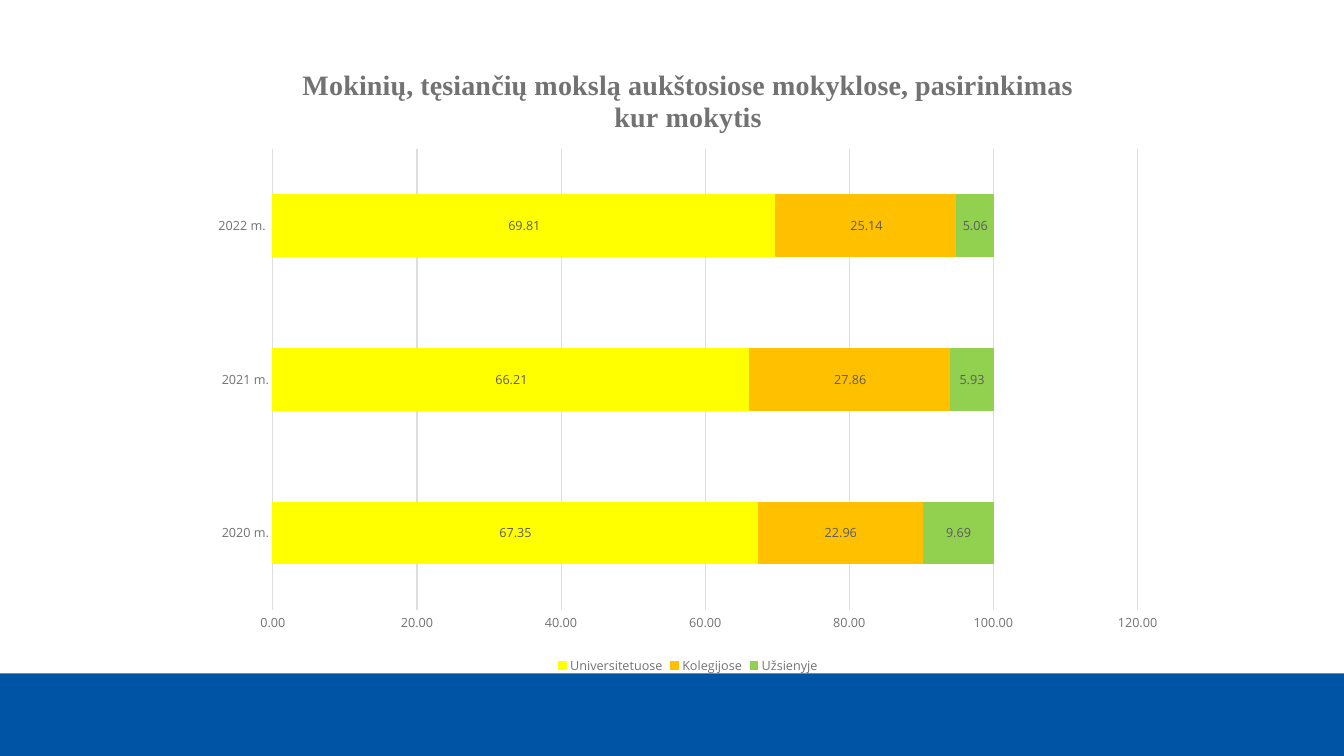
from lxml import etree
from pptx import Presentation
from pptx.chart.data import CategoryChartData
from pptx.dml.color import RGBColor
from pptx.enum.chart import (XL_CHART_TYPE, XL_LABEL_POSITION, XL_LEGEND_POSITION,
                             XL_TICK_MARK)
from pptx.enum.shapes import MSO_SHAPE
from pptx.oxml.ns import qn
from pptx.util import Inches, Pt

BAR_STACKED = XL_CHART_TYPE.BAR_STACKED
LABEL_CENTER = XL_LABEL_POSITION.CENTER
LEGEND_BOTTOM = XL_LEGEND_POSITION.BOTTOM
NO_TICK = XL_TICK_MARK.NONE
RECTANGLE = MSO_SHAPE.RECTANGLE

BLUE = RGBColor(0x00, 0x54, 0xA5)
INK = RGBColor(0x26, 0x26, 0x26)
GREY = RGBColor(0x72, 0x72, 0x72)
LABEL_GREY = RGBColor(0x5C, 0x5C, 0x5C)
GRID_GREY = RGBColor(0xDE, 0xDE, 0xDE)
YELLOW = RGBColor(0xFF, 0xFF, 0x00)
ORANGE = RGBColor(0xFF, 0xC0, 0x00)
GREEN = RGBColor(0x92, 0xD0, 0x50)

BODY_FONT = "Open Sans"
TITLE_FONT = "Times New Roman"
VALUE_FORMAT = "0.00"
TITLE = "Mokinių, tęsiančių mokslą aukštosiose mokyklose, pasirinkimas kur mokytis"
YEARS = ["2020 m.", "2021 m.", "2022 m. "]
DESTINATIONS = [
    ("Universitetuose", (67.35, 66.21, 69.81), YELLOW),
    ("Kolegijose", (22.96, 27.86, 25.14), ORANGE),
    ("Užsienyje", (9.69, 5.93, 5.06), GREEN),
]
# Plot area as fractions of the chart
PLOT_AREA = {"x": 0.075, "y": 0.165, "w": 0.885, "h": 0.727}


def set_font(font, size, color, name=BODY_FONT, bold=False):
    values = {"size": Pt(size), "name": name, "bold": bold}
    for attribute, value in values.items():
        setattr(font, attribute, value)
    font.color.rgb = color


def set_line(line, color):
    line.color.rgb = color
    line.width = Pt(0.75)


def add_footer_band(slide, slide_width):
    band = slide.shapes.add_shape(RECTANGLE, 0, Inches(6.68), slide_width, Inches(0.82))
    band.shadow.inherit = False
    band.fill.solid()
    band.fill.fore_color.rgb = BLUE
    band.line.fill.background()


def add_destination_chart(slide):
    data = CategoryChartData(number_format=VALUE_FORMAT)
    data.categories = YEARS
    for name, shares, _ in DESTINATIONS:
        data.add_series(name, shares)
    chart = slide.shapes.add_chart(BAR_STACKED, Inches(1.98), Inches(0.44),
                                   Inches(9.69), Inches(6.29), data).chart
    set_font(chart.font, 10, INK)
    return chart


def format_title(chart):
    chart.has_title = True
    paragraph = chart.chart_title.text_frame.paragraphs[0]
    run = paragraph.add_run()
    run.text = TITLE
    for font in (paragraph.font, run.font):
        set_font(font, 20, GREY, TITLE_FONT, True)
    chart.chart_title.include_in_layout = False


def format_axes(chart):
    years, shares = chart.category_axis, chart.value_axis
    for axis in (years, shares):
        axis.major_tick_mark = axis.minor_tick_mark = NO_TICK
        set_font(axis.tick_labels.font, 9, GREY)
    set_line(years.format.line, GRID_GREY)
    shares.format.line.fill.background()
    set_line(shares.major_gridlines.format.line, GRID_GREY)
    shares.minimum_scale, shares.maximum_scale, shares.major_unit = 0, 120, 20
    shares.tick_labels.number_format = VALUE_FORMAT
    shares.tick_labels.number_format_is_linked = False


def format_bars(chart):
    plot = chart.plots[0]
    plot.vary_by_categories = False
    plot.gap_width, plot.overlap = 150, 100
    for series, (_, _, color) in zip(plot.series, DESTINATIONS):
        series.format.fill.solid()
        series.format.fill.fore_color.rgb = color
        set_line(series.format.line, color)
        labels = series.data_labels
        label_format = {"show_value": True, "number_format": VALUE_FORMAT,
                        "number_format_is_linked": False, "position": LABEL_CENTER}
        for attribute, value in label_format.items():
            setattr(labels, attribute, value)
        set_font(labels.font, 9, LABEL_GREY)


def format_legend(chart):
    chart.has_legend = True
    chart.legend.position = LEGEND_BOTTOM
    chart.legend.include_in_layout = False
    set_font(chart.legend.font, 9, GREY)


def place_plot_area(chart):
    plot_area = chart.element.find(".//" + qn("c:plotArea"))
    for automatic in plot_area.findall(qn("c:layout")):
        plot_area.remove(automatic)
    layout = etree.Element(qn("c:layout"))
    manual = etree.SubElement(layout, qn("c:manualLayout"))
    settings = {"layoutTarget": "inner", "xMode": "edge", "yMode": "edge", **PLOT_AREA}
    for tag, value in settings.items():
        etree.SubElement(manual, qn("c:" + tag)).set("val", str(value))
    plot_area.insert(0, layout)


def main():
    presentation = Presentation()
    presentation.slide_width = Inches(13.33)
    presentation.slide_height = Inches(7.5)
    slide = presentation.slides.add_slide(presentation.slide_layouts[6])
    add_footer_band(slide, presentation.slide_width)
    chart = add_destination_chart(slide)
    for format_part in (format_title, format_axes, format_bars, format_legend,
                        place_plot_area):
        format_part(chart)
    presentation.save("out.pptx")


if __name__ == "__main__":
    main()
